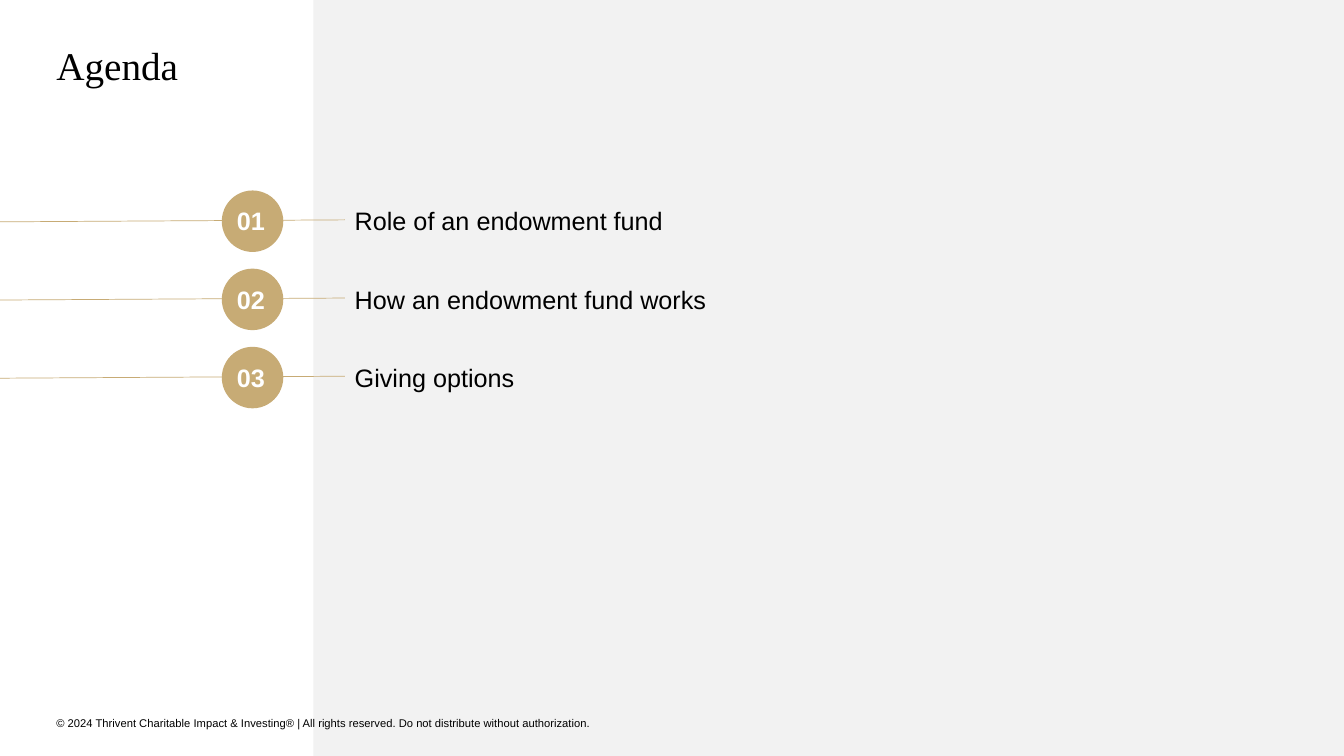
from pptx import Presentation
from pptx.dml.color import RGBColor
from pptx.enum.shapes import MSO_CONNECTOR, MSO_SHAPE
from pptx.enum.text import MSO_ANCHOR
from pptx.oxml.ns import qn
from pptx.util import Cm, Pt
from lxml.etree import SubElement

TITLE = "Agenda"
AGENDA = ["Role of an endowment fund", "How an endowment fund works", "Giving options"]
FOOTER = ("© 2024 Thrivent Charitable Impact & Investing® | All rights reserved. "
          "Do not distribute without authorization.")

BLACK = RGBColor(0x00, 0x00, 0x00)
WHITE = RGBColor(0xFF, 0xFF, 0xFF)
GOLD = RGBColor(0xC7, 0xAB, 0x75)
PALE_GRAY = RGBColor(0xF2, 0xF2, 0xF2)

SLIDE_WIDTH, SLIDE_HEIGHT = 33.87, 19.05
PANEL_LEFT = 7.9
MARGIN = 1.42
FIRST_ROW, ROW_PITCH = 4.8, 1.97
CIRCLE_LEFT, CIRCLE_SIZE = 5.59, 1.55
NUMBER_LEFT, LABEL_LEFT = 5.72, 8.69
TEXT_OFFSET, TEXT_HEIGHT = 0.26, 1.02


def add_text(shapes, text, left, top, width, height, size=18, font="Arial",
             color=BLACK, bold=False, inset=True, anchor=MSO_ANCHOR.TOP, spacing=1.0):
    box = shapes.add_textbox(Cm(left), Cm(top), Cm(width), Cm(height))
    frame = box.text_frame
    frame.word_wrap = True
    frame.vertical_anchor = anchor
    if not inset:
        frame.margin_left = frame.margin_right = frame.margin_top = frame.margin_bottom = 0
    paragraph = frame.paragraphs[0]
    paragraph.text = text
    paragraph.line_spacing = spacing
    paragraph.font.size = Pt(size)
    paragraph.font.name = font
    paragraph.font.bold = bold
    paragraph.font.color.rgb = color


def add_filled_shape(shapes, preset, left, top, width, height, color):
    shape = shapes.add_shape(preset, Cm(left), Cm(top), Cm(width), Cm(height))
    shape.shadow.inherit = False
    shape.fill.solid()
    shape.fill.fore_color.rgb = color
    shape.line.fill.background()


def add_agenda_row(slide, index, label):
    top = FIRST_ROW + index * ROW_PITCH
    shapes = slide.shapes.add_group_shape().shapes
    line = shapes.add_connector(MSO_CONNECTOR.STRAIGHT, Cm(0), Cm(top + 0.79),
                                Cm(LABEL_LEFT), Cm(top + 0.74))
    line.line.color.rgb = GOLD
    line.line.width = Pt(0.5)
    SubElement(line._element.spPr, qn("a:effectLst"))
    add_filled_shape(shapes, MSO_SHAPE.OVAL, CIRCLE_LEFT, top, CIRCLE_SIZE, CIRCLE_SIZE, GOLD)
    add_text(shapes, f"{index + 1:02d}", NUMBER_LEFT, top + TEXT_OFFSET, 2.2, TEXT_HEIGHT,
             color=WHITE, bold=True)
    add_text(shapes, label, LABEL_LEFT, top + TEXT_OFFSET, 16, TEXT_HEIGHT)


def main():
    presentation = Presentation()
    presentation.slide_width = Cm(SLIDE_WIDTH)
    presentation.slide_height = Cm(SLIDE_HEIGHT)
    slide = presentation.slides.add_slide(presentation.slide_layouts[6])
    add_filled_shape(slide.shapes, MSO_SHAPE.RECTANGLE, PANEL_LEFT, 0,
                     SLIDE_WIDTH - PANEL_LEFT, SLIDE_HEIGHT, PALE_GRAY)
    add_text(slide.shapes, TITLE, MARGIN, 1.17, SLIDE_WIDTH - 2 * MARGIN, 2.36,
             size=28, font="Times New Roman", inset=False, spacing=0.9)
    for index, label in enumerate(AGENDA):
        add_agenda_row(slide, index, label)
    add_text(slide.shapes, FOOTER, MARGIN, 18.01, 15.49, 0.41,
             size=8, inset=False, anchor=MSO_ANCHOR.MIDDLE)
    presentation.save("out.pptx")


if __name__ == "__main__":
    main()
